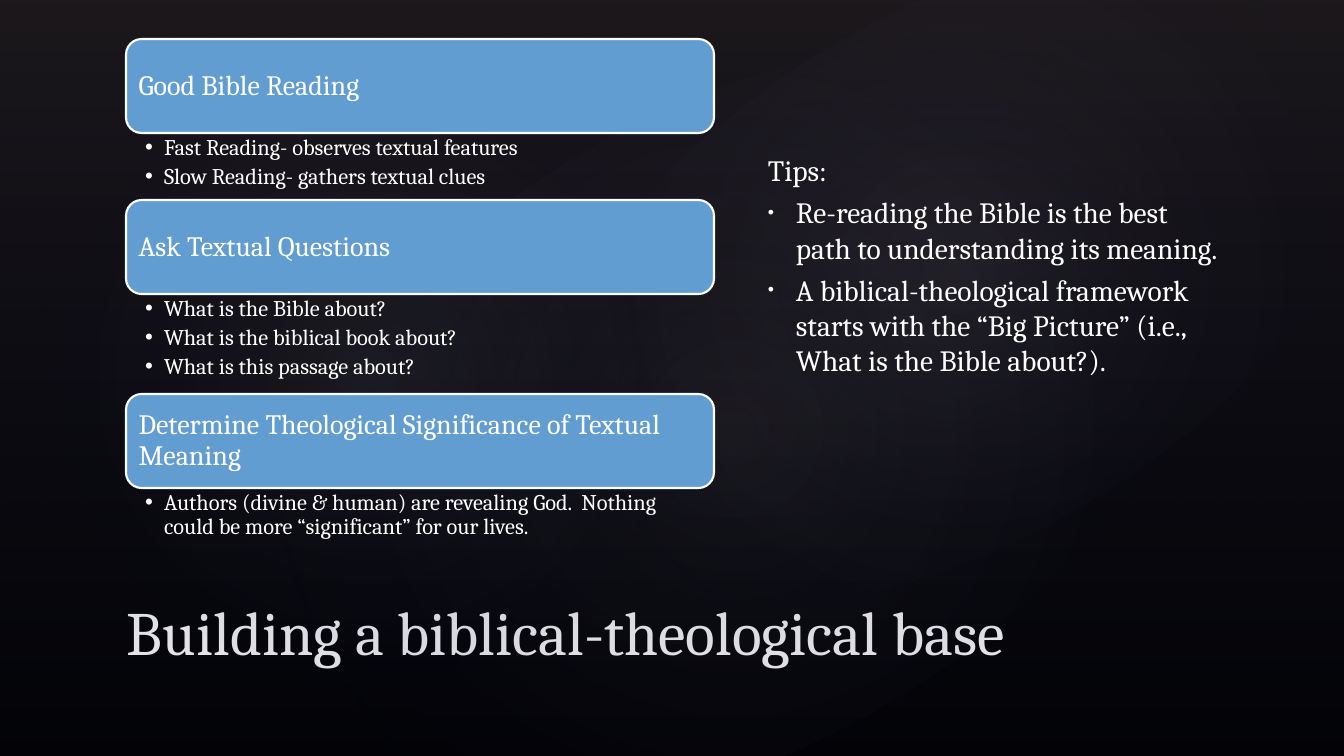
from lxml.etree import SubElement
from pptx import Presentation
from pptx.dml.color import RGBColor
from pptx.enum.shapes import MSO_SHAPE as Shape
from pptx.enum.text import MSO_ANCHOR as Anchor, MSO_AUTO_SIZE as AutoSize, PP_ALIGN as Align
from pptx.oxml.ns import qn
from pptx.util import Pt

EMU_PER_PX = 12192000 / 1344
WIDTH, HEIGHT = 1344, 756

BLACK = RGBColor(0x00, 0x00, 0x00)
WHITE = RGBColor(0xFF, 0xFF, 0xFF)
BLUE = RGBColor(0x62, 0x9D, 0xD1)
NAVY = RGBColor(0x24, 0x28, 0x52)
PLUM = RGBColor(0x50, 0x46, 0x52)
MIST = RGBColor(0xC4, 0xBC, 0xC6)

CARD_LEFT, CARD_TOP, CARD_WIDTH, CARD_HEIGHT = 126, 39, 588, 94
CARDS = [
    ("Good Bible Reading", 67, [
        "Fast Reading- observes textual features",
        "Slow Reading- gathers textual clues",
    ]),
    ("Ask Textual Questions", 100, [
        "What is the Bible about?",
        "What is the biblical book about?",
        "What is this passage about?",
    ]),
    ("Determine Theological Significance of Textual Meaning", 60, [
        "Authors (divine & human) are revealing God.  Nothing could be more “significant” for our lives.",
    ]),
]
TIPS = [
    "Re-reading the Bible is the best path to understanding its meaning.",
    "A biblical-theological framework starts with the “Big Picture” (i.e., What is the Bible about?).",
]
GLOWS = [
    ((202, 115, 1064, 629), 328.7, 7),
    ((61, 46, 611, 658), 294.3, 8),
    ((482, 13, 953, 524), 328.7, 8),
]


def emu(px):
    return round(px * EMU_PER_PX)


class SlideBuilder:
    font = "Cambria"
    color = WHITE

    def __init__(self, presentation):
        self.slide = presentation.slides.add_slide(presentation.slide_layouts[5])
        fill = self.slide.background.fill
        fill.solid()
        fill.fore_color.rgb = BLACK

    def shape(self, kind, box):
        shape = self.slide.shapes.add_shape(kind, *map(emu, box))
        shape.shadow.inherit = False
        return shape

    def gradient_shape(self, kind, box, stops, rotation=0, radial=False):
        shape = self.shape(kind, box)
        shape.rotation = rotation
        shape.line.fill.background()
        shape.fill.gradient()
        gradient = shape._element.spPr.find(qn("a:gradFill"))
        for child in list(gradient):
            gradient.remove(child)
        stop_list = SubElement(gradient, qn("a:gsLst"))
        for position, color, opacity in stops:
            stop = SubElement(stop_list, qn("a:gs"), pos=str(position * 1000))
            tint = SubElement(stop, qn("a:srgbClr"), val=str(color))
            SubElement(tint, qn("a:alpha"), val=str(opacity * 1000))
        if radial:
            circle = SubElement(gradient, qn("a:path"), path="circle")
            SubElement(circle, qn("a:fillToRect"), l="50000", t="50000", r="50000", b="50000")
        else:
            SubElement(gradient, qn("a:lin"), ang="5400000", scaled="0")

    def frame(self, shape, anchor, margins):
        frame = shape.text_frame
        frame.word_wrap = True
        frame.auto_size = AutoSize.NONE
        frame.vertical_anchor = anchor
        (frame.margin_left, frame.margin_top,
         frame.margin_right, frame.margin_bottom) = map(emu, margins)
        return frame

    def paragraph(self, frame, text, size, spacing=1.0, before=0, after=0,
                  indent=0, hanging=0, bullet_percent=None):
        paragraph = frame.paragraphs[0]
        if paragraph.runs:
            paragraph = frame.add_paragraph()
        paragraph.alignment = Align.LEFT
        paragraph.line_spacing = spacing
        paragraph.space_before = Pt(before)
        paragraph.space_after = Pt(after)
        properties = paragraph._p.get_or_add_pPr()
        properties.set("marL", str(emu(indent)))
        properties.set("indent", str(-emu(hanging)))
        if bullet_percent:
            SubElement(properties, qn("a:buSzPct"), val=str(bullet_percent * 1000))
            SubElement(properties, qn("a:buFont"), typeface="Arial")
            SubElement(properties, qn("a:buChar"), char="•")
        run = paragraph.add_run()
        run.text = text
        run.font.name = self.font
        run.font.size = Pt(size)
        run.font.color.rgb = self.color

    def text_box(self, box, anchor, margins):
        return self.frame(self.slide.shapes.add_textbox(*map(emu, box)), anchor, margins)

    def title(self, text, box):
        title = self.slide.shapes.title
        title.left, title.top, title.width, title.height = map(emu, box)
        self.paragraph(self.frame(title, Anchor.BOTTOM, (10, 5, 10, 5)), text, 44)

    def card(self, heading, box):
        card = self.shape(Shape.ROUNDED_RECTANGLE, box)
        card.fill.solid()
        card.fill.fore_color.rgb = BLUE
        card.line.color.rgb = WHITE
        card.line.width = Pt(1.5)
        self.paragraph(self.frame(card, Anchor.MIDDLE, (8, 8, 8, 8)), heading, 20, spacing=0.9)

    def details(self, lines, box):
        frame = self.text_box(box, Anchor.TOP, (19, 3, 16, 3))
        for line in lines:
            self.paragraph(frame, line, 16, spacing=0.9, after=3.6,
                           indent=19, hanging=19, bullet_percent=100)

    def tips(self, heading, lines, box):
        frame = self.text_box(box, Anchor.MIDDLE, (10, 5, 10, 5))
        self.paragraph(frame, heading, 21, before=4.8, indent=2)
        for line in lines:
            self.paragraph(frame, line, 21, before=4.8,
                           indent=30, hanging=28, bullet_percent=60)


def main():
    presentation = Presentation()
    presentation.slide_width, presentation.slide_height = emu(WIDTH), emu(HEIGHT)
    builder = SlideBuilder(presentation)

    builder.gradient_shape(Shape.RECTANGLE, (0, 0, WIDTH, HEIGHT),
                           [(0, PLUM, 36), (100, NAVY, 10)])
    for box, rotation, opacity in GLOWS:
        builder.gradient_shape(Shape.OVAL, box, [(0, MIST, opacity), (58, NAVY, 0)],
                               rotation, radial=True)

    builder.title("Building a biblical-theological base", (117, 572, 1109, 101))
    top = CARD_TOP
    for heading, details_height, lines in CARDS:
        builder.card(heading, (CARD_LEFT, top, CARD_WIDTH, CARD_HEIGHT))
        top += CARD_HEIGHT
        builder.details(lines, (CARD_LEFT, top, CARD_WIDTH, details_height))
        top += details_height
    builder.tips("Tips:", TIPS, (756, 76, 481, 378))

    presentation.save("out.pptx")


if __name__ == "__main__":
    main()
